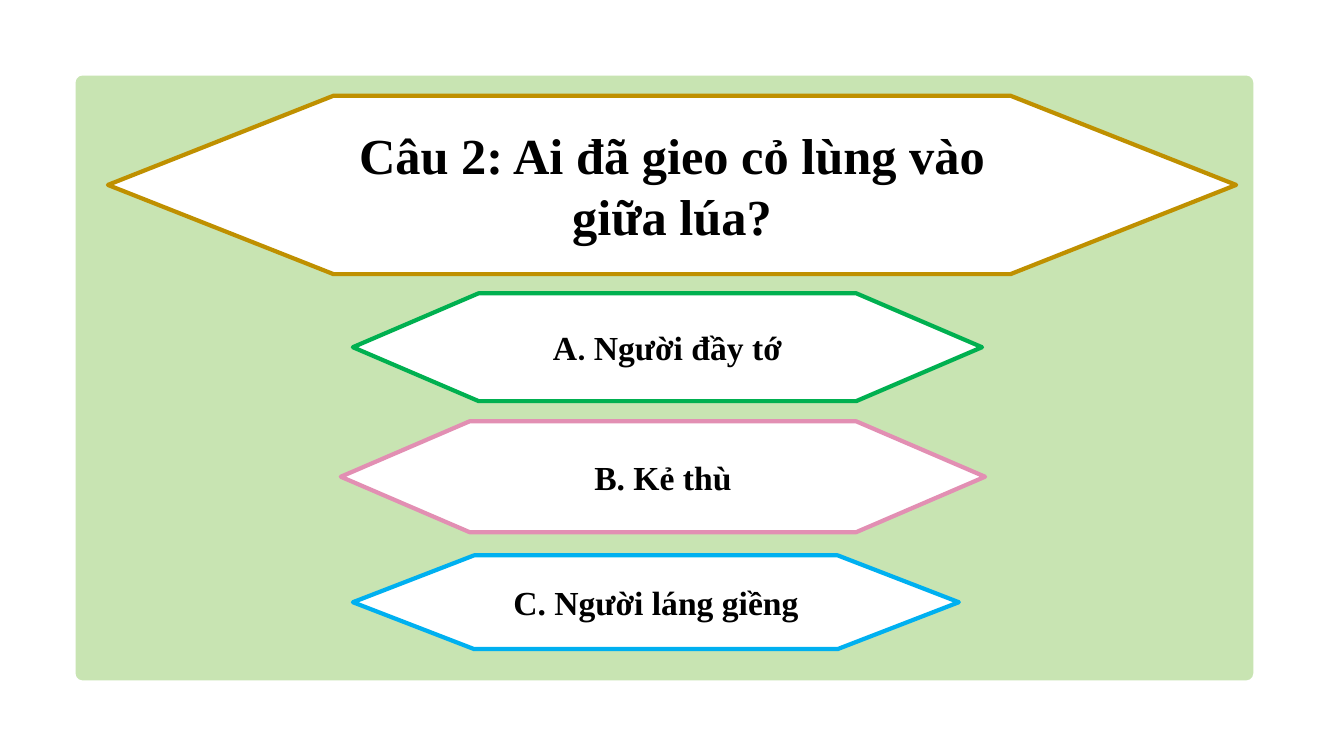
from pptx import Presentation
from pptx.dml.color import RGBColor
from pptx.enum import shapes, text
from pptx.util import Inches, Pt

WHITE = RGBColor(0xFF, 0xFF, 0xFF)
BLACK = RGBColor(0, 0, 0)
PALE_GREEN = RGBColor(0xC8, 0xE4, 0xB2)
GOLD = RGBColor(0xBF, 0x90, 0x00)
GREEN = RGBColor(0x00, 0xB0, 0x50)
PINK = RGBColor(0xE2, 0x8F, 0xB3)
BLUE = RGBColor(0x00, 0xB0, 0xF0)

SERIF = "Times New Roman"
SANS = "Calibri"
QUESTION = "Câu 2: Ai đã gieo cỏ lùng vào giữa lúa?"
ANSWERS = [
    ((3.5, 2.91, 6.24, 1.07), GREEN,
     [("A", SERIF), (". ", SANS), ("Người đầy tớ", SERIF)]),
    ((3.38, 4.18, 6.39, 1.1), PINK, [("B. Kẻ thù", SERIF)]),
    ((3.5, 5.51, 6.01, 0.93), BLUE, [("C. Người láng giềng", SERIF)]),
]


def add_panel(page, box):
    panel = page.shapes.add_shape(
        shapes.MSO_SHAPE.ROUNDED_RECTANGLE, *map(Inches, box))
    panel.adjustments[0] = 0.07 / box[3]
    panel.shadow.inherit = False
    panel.fill.solid()
    panel.fill.fore_color.rgb = PALE_GREEN
    panel.line.fill.background()


def add_hexagon(page, box, outline):
    hexagon = page.shapes.add_shape(
        shapes.MSO_SHAPE.FLOWCHART_PREPARATION, *map(Inches, box))
    hexagon.shadow.inherit = False
    hexagon.fill.solid()
    hexagon.fill.fore_color.rgb = WHITE
    hexagon.line.color.rgb = outline
    hexagon.line.width = Pt(3)
    return hexagon


def write_centred(shape, spans, size):
    """Fill the shape with one centred bold line of (words, font) spans."""
    frame = shape.text_frame
    frame_format = {
        "word_wrap": True,
        "auto_size": text.MSO_AUTO_SIZE.NONE,
        "vertical_anchor": text.MSO_ANCHOR.MIDDLE,
    }
    for name, value in frame_format.items():
        setattr(frame, name, value)
    para = frame.paragraphs[0]
    para.alignment = text.PP_ALIGN.CENTER
    for words, font_name in spans:
        span = para.add_run()
        span.text = words
        font_format = {"name": font_name, "size": Pt(size), "bold": True}
        for name, value in font_format.items():
            setattr(span.font, name, value)
        span.font.color.rgb = BLACK


def add_question(page, box):
    """Lay the title over the flat middle three fifths of a hexagon."""
    add_hexagon(page, box, GOLD)
    left, top, width, height = box
    title = page.shapes.title
    title_format = {
        "left": left + width / 5, "top": top,
        "width": width * 3 / 5, "height": height,
    }
    for name, value in title_format.items():
        setattr(title, name, Inches(value))
    write_centred(title, [(QUESTION, SERIF)], 36)
    title.element.getparent().append(title.element)  # bring to front


def add_answers(page, answers):
    for box, outline, spans in answers:
        write_centred(add_hexagon(page, box, outline), spans, 24)


def main():
    deck = Presentation()
    deck.slide_width = Inches(13.33)
    deck.slide_height = Inches(7.5)
    page = deck.slides.add_slide(deck.slide_layouts.get_by_name("Title Only"))
    add_panel(page, (0.75, 0.75, 11.68, 6))
    add_question(page, (1.07, 0.95, 11.19, 1.77))
    add_answers(page, ANSWERS)
    deck.save("out.pptx")


if __name__ == "__main__":
    main()
